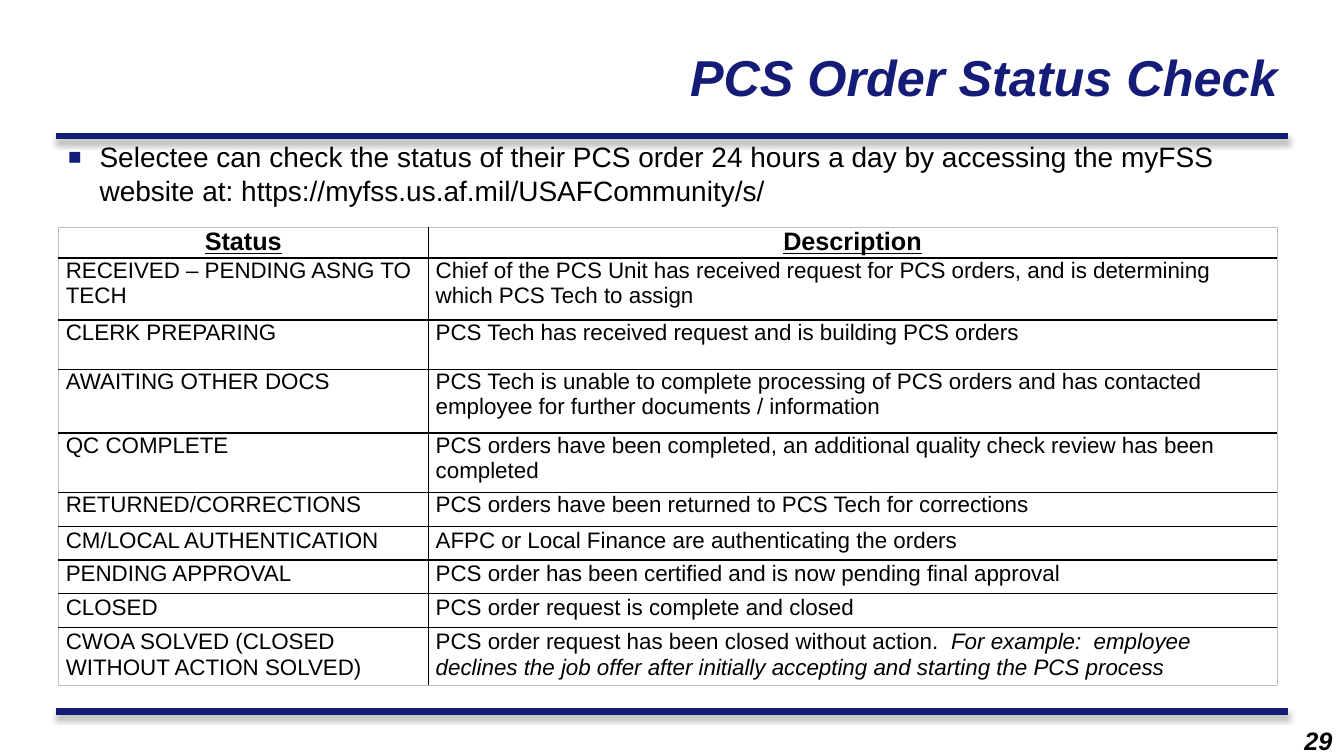
import lxml.etree
import pptx
import pptx.dml.color
import pptx.enum.shapes
import pptx.enum.text
import pptx.oxml
import pptx.oxml.ns
import pptx.util

Cm, Pt = pptx.util.Cm, pptx.util.Pt
ALIGN = pptx.enum.text.PP_ALIGN
NS = pptx.oxml.ns.nsdecls("a")
COLORS = {"navy": "151C77", "text": "000000", "paper": "FFFFFF", "edge": "BFBFBF"}
FONT = "Arial"

HEADERS = ("Status", "Description")
COLUMN_WIDTHS = (9.32, 21.39)
HEADER_HEIGHT = 0.73
# Row height, line spacing, status, description, example in italics
STATUSES = [
    (1.56, 1, "RECEIVED – PENDING ASNG TO TECH",
     "Chief of the PCS Unit has received request for PCS orders, and is "
     "determining which PCS Tech to assign", ""),
    (1.24, 1, "CLERK PREPARING",
     "PCS Tech has received request and is building PCS orders", ""),
    (1.61, 1, "AWAITING OTHER DOCS",
     "PCS Tech is unable to complete processing of PCS orders and has "
     "contacted employee for further documents / information", ""),
    (1.49, 1, "QC COMPLETE",
     "PCS orders have been completed, an additional quality check review "
     "has been completed", ""),
    (0.86, 1, "RETURNED/CORRECTIONS",
     "PCS orders have been returned to PCS Tech for corrections", ""),
    (0.85, 1.07, "CM/LOCAL AUTHENTICATION",
     "AFPC or Local Finance are authenticating the orders", ""),
    (0.85, 1.07, "PENDING APPROVAL",
     "PCS order has been certified and is now pending final approval", ""),
    (0.85, 1.07, "CLOSED", "PCS order request is complete and closed", ""),
    (1.34, 1.07, "CWOA SOLVED (CLOSED WITHOUT ACTION SOLVED)",
     "PCS order request has been closed without action.  ",
     "For example:  employee declines the job offer after initially "
     "accepting and starting the PCS process"),
]


def rgb(name):
    return pptx.dml.color.RGBColor.from_string(COLORS[name])


def add_run(p, text, size, color="text", bold=False, italic=False, underline=False):
    r = p.add_run()
    r.text = text
    f = r.font
    f.name, f.size, f.bold, f.italic, f.underline = FONT, Pt(size), bold, italic, underline
    f.color.rgb = rgb(color)


def add_text_frame(s, left, top, width, height):
    tf = s.shapes.add_textbox(Cm(left), Cm(top), Cm(width), Cm(height)).text_frame
    tf.word_wrap = True
    return tf


def add_rule(s, left, top, width):
    """Draw a thick horizontal line with a soft shadow below it."""
    line = s.shapes.add_connector(pptx.enum.shapes.MSO_CONNECTOR.STRAIGHT,
                                  Cm(left), Cm(top), Cm(left + width), Cm(top))
    line.line.color.rgb = rgb("navy")
    line.line.width = Pt(4.5)
    line._element.spPr.append(pptx.oxml.parse_xml(
        f'<a:effectLst {NS}><a:outerShdw blurRad="{Pt(4)}" dist="{Pt(3)}" dir="5400000" '
        f'rotWithShape="0"><a:srgbClr val="{COLORS["text"]}"><a:alpha val="40000"/>'
        '</a:srgbClr></a:outerShdw></a:effectLst>'))


def add_title(s, left, top, width, height):
    tf = add_text_frame(s, left, top, width, height)
    tf.margin_top, tf.margin_right = 0, Cm(0.61)
    p = tf.paragraphs[0]
    p.alignment = ALIGN.RIGHT
    add_run(p, "PCS Order Status Check", 36, "navy", bold=True, italic=True)


def add_body(s, left, top, width, height):
    p = add_text_frame(s, left, top, width, height).paragraphs[0]
    pPr = p._p.get_or_add_pPr()
    pPr.set("marL", str(Cm(0.79)))
    pPr.set("indent", str(-Cm(0.79)))
    for bullet in (f'<a:buClr {NS}><a:srgbClr val="{COLORS["navy"]}"/></a:buClr>',
                   f'<a:buSzPct {NS} val="80000"/>',
                   f'<a:buFont {NS} typeface="{FONT}"/>',
                   f'<a:buChar {NS} char="■"/>'):
        pPr.append(pptx.oxml.parse_xml(bullet))
    add_run(p, "Selectee can check the status of their PCS order 24 hours a day by "
               "accessing the myFSS website at: "
               "https://myfss.us.af.mil/USAFCommunity/s/", 20)


def set_borders(cell, outer_sides):
    """Draw black inner borders and thin grey ones on the outer sides."""
    tcPr = cell._tc.get_or_add_tcPr()
    for i, side in enumerate("LRTB"):
        color, width = ("edge", 0.5) if side in outer_sides else ("text", 1)
        tcPr.insert(i, pptx.oxml.parse_xml(
            f'<a:ln{side} {NS} w="{Pt(width)}"><a:solidFill>'
            f'<a:srgbClr val="{COLORS[color]}"/></a:solidFill></a:ln{side}>'))


def add_status_table(s, left, top):
    heights = [HEADER_HEIGHT] + [status[0] for status in STATUSES]
    table = s.shapes.add_table(len(heights), len(HEADERS), Cm(left), Cm(top),
                               Cm(sum(COLUMN_WIDTHS)), Cm(sum(heights))).table
    table.horz_banding = False
    for column, width in zip(table.columns, COLUMN_WIDTHS):
        column.width = Cm(width)
    for i, height in enumerate(heights):
        table.rows[i].height = Cm(height)
        for j, cell in enumerate(table.rows[i].cells):
            cell.margin_left = cell.margin_right = Cm(0.19)
            cell.margin_top = cell.margin_bottom = 0
            cell.fill.solid()
            cell.fill.fore_color.rgb = rgb("paper")
            set_borders(cell, "LR"[j] + ("T" if i == 0 else "")
                        + ("B" if i == len(STATUSES) else ""))
            p = cell.text_frame.paragraphs[0]
            if i == 0:
                p.alignment = ALIGN.CENTER
                add_run(p, HEADERS[j], 18, bold=True, underline=True)
                continue
            _, spacing, status, description, example = STATUSES[i - 1]
            if spacing != 1:
                p.line_spacing, p.space_after = spacing, Pt(8)
            add_run(p, (status, description)[j], 16)
            if j == 1 and example:
                add_run(p, example, 16, italic=True)


def add_page_number(s, left, top, width, height):
    p = add_text_frame(s, left, top, width, height).paragraphs[0]
    p.alignment = ALIGN.RIGHT
    add_run(p, "29", 18, bold=True, italic=True)


def main():
    prs = pptx.Presentation()
    prs.slide_width, prs.slide_height = Cm(33.87), Cm(19.05)
    s = prs.slides.add_slide(prs.slide_layouts[6])
    for top in (17.93, 3.43):
        add_rule(s, 1.42, top, 31.04)
    add_title(s, 13.77, 1.17, 19.05, 2.49)
    add_body(s, 1.47, 3.4, 30.68, 14)
    add_status_table(s, 1.47, 5.74)
    add_page_number(s, 29.59, 18.14, 4.24, 0.84)
    prs.save("out.pptx")


if __name__ == "__main__":
    main()
